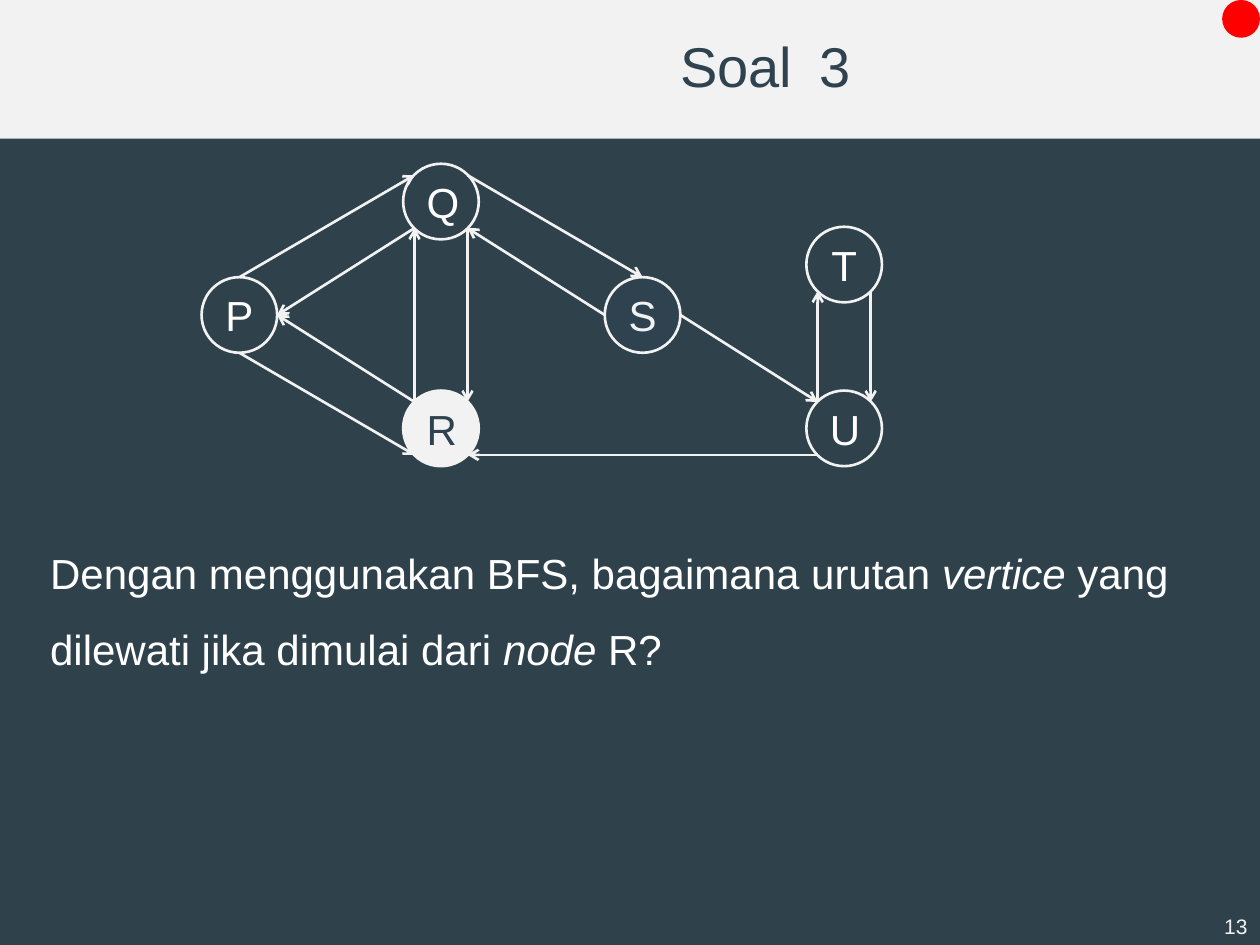
import math
import pptx
import pptx.util
import pptx.dml.color
import pptx.enum.shapes
import pptx.enum.text
import lxml.etree
import pptx.oxml.ns

Inches = pptx.util.Inches
Shape = pptx.enum.shapes.MSO_SHAPE
Anchor = pptx.enum.text.MSO_ANCHOR
Align = pptx.enum.text.PP_ALIGN
AutoSize = pptx.enum.text.MSO_AUTO_SIZE
qn = pptx.oxml.ns.qn


def color(hex_code):
    return pptx.dml.color.RGBColor.from_string(hex_code)


def write(shape, runs, size, hex_code, **frame_format):
    frame = shape.text_frame
    frame_values = {"word_wrap": False, "auto_size": AutoSize.NONE,
                    "vertical_anchor": Anchor.TOP}
    for name, value in (frame_values | frame_format).items():
        setattr(frame, name, value)
    para = frame.paragraphs[0]
    for text, italic in runs:
        span = para.add_run()
        span.text = text
        span_format = {"name": "Arial", "size": pptx.util.Pt(size), "italic": italic}
        for name, value in span_format.items():
            setattr(span.font, name, value)
        span.font.color.rgb = color(hex_code)
    return para


deck = pptx.Presentation()
deck.slide_width = Inches(10)
deck.slide_height = Inches(7.5)
page = deck.slides.add_slide(deck.slide_layouts[5])
page.background.fill.solid()
page.background.fill.fore_color.rgb = color("F2F2F2")

blocks = [
    (Shape.RECTANGLE, 0, 1.1, 10, 6.4, "2F424C"),
    (Shape.OVAL, 9.7, 0, 0.3, 0.3, "FF0000"),
]
for preset, left, top, width, height, fill in blocks:
    block = page.shapes.add_shape(preset, Inches(left), Inches(top), Inches(width), Inches(height))
    block.shadow.inherit = False
    block.fill.solid()
    block.fill.fore_color.rgb = color(fill)
    block.line.fill.background()

title = page.shapes.title
title_place = {"left": 6.4, "top": 0.2, "width": 0.8, "height": 0.7}
for name, value in title_place.items():
    setattr(title, name, Inches(value))
para = write(title, [("3", None)], 32, "2F424F")
para.alignment = Align.LEFT

question = [
    ("Dengan menggunakan BFS, bagaimana urutan ", None),
    ("vertice", True),
    (" yang dilewati jika dimulai dari ", None),
    ("node ", True),
    ("R?", None),
]
labels = [
    (5.3, 0.2, 1.1, 0.7, [("Soal", None)], 32, "2F424F", {}, {}),
    (9.6, 7.2, 0.4, 0.3, [("13", None)], 12, "F2F2F2",
     {"vertical_anchor": Anchor.BOTTOM}, {"alignment": Align.RIGHT}),
    (0.3, 4.1, 9.4, 1.6, question, 24, "FFFFFF",
     {"word_wrap": True}, {"line_spacing": 1.5}),
]
for left, top, width, height, runs, size, ink, frame_format, para_format in labels:
    box = page.shapes.add_textbox(Inches(left), Inches(top), Inches(width), Inches(height))
    para = write(box, runs, size, ink, **frame_format)
    for name, value in para_format.items():
        setattr(para, name, value)

radius = 0.3
nodes = {
    "Q": (3.5, 1.6, None, "FFFFFF"),
    "P": (1.9, 2.5, None, "FFFFFF"),
    "R": (3.5, 3.4, "F2F2F2", "2F424F"),
    "S": (5.1, 2.5, "2F424F", "F2F2F2"),
    "T": (6.7, 2.1, None, "FFFFFF"),
    "U": (6.7, 3.4, None, "FFFFFF"),
}
for letter, (x, y, fill, ink) in nodes.items():
    node = page.shapes.add_shape(Shape.OVAL, Inches(x - radius), Inches(y - radius),
                                 Inches(2 * radius), Inches(2 * radius))
    node.shadow.inherit = False
    if fill:
        node.fill.solid()
        node.fill.fore_color.rgb = color(fill)
    else:
        node.fill.background()
    node.line.color.rgb = color("F2F2F2")
    node.line.width = pptx.util.Pt(1.5)
    para = write(node, [(letter, None)], 24, ink, word_wrap=True, vertical_anchor=Anchor.MIDDLE)
    para.alignment = Align.CENTER

angles = {"E": 0, "SE": 45, "S": 90, "SW": 135, "W": 180, "NW": 225, "N": 270, "NE": 315}
edges = [
    ("P", "N", "Q", "NW"),
    ("Q", "NE", "S", "N"),
    ("R", "NW", "P", "E"),
    ("U", "SW", "R", "SE"),
    ("R", "NW", "Q", "SW"),
    ("Q", "SE", "R", "NE"),
    ("S", "E", "U", "NW"),
    ("U", "NW", "T", "SW"),
    ("T", "SE", "U", "NE"),
    ("S", "W", "Q", "SE"),
    ("Q", "SW", "P", "E"),
    ("P", "S", "R", "SW"),
]
for start, start_side, end, end_side in edges:
    ends = []
    for letter, side in ((start, start_side), (end, end_side)):
        x, y = nodes[letter][:2]
        angle = math.radians(angles[side])
        ends += [Inches(round(x + radius * math.cos(angle), 2)),
                 Inches(round(y + radius * math.sin(angle), 2))]
    arrow = page.shapes.add_connector(pptx.enum.shapes.MSO_CONNECTOR.STRAIGHT, *ends)
    arrow.line.color.rgb = color("F2F2F2")
    arrow.line.width = pptx.util.Pt(1.5)
    lxml.etree.SubElement(arrow.line._get_or_add_ln(), qn("a:tailEnd"), type="arrow")
    lxml.etree.SubElement(arrow._element.spPr, qn("a:effectLst"))

deck.save("out.pptx")
